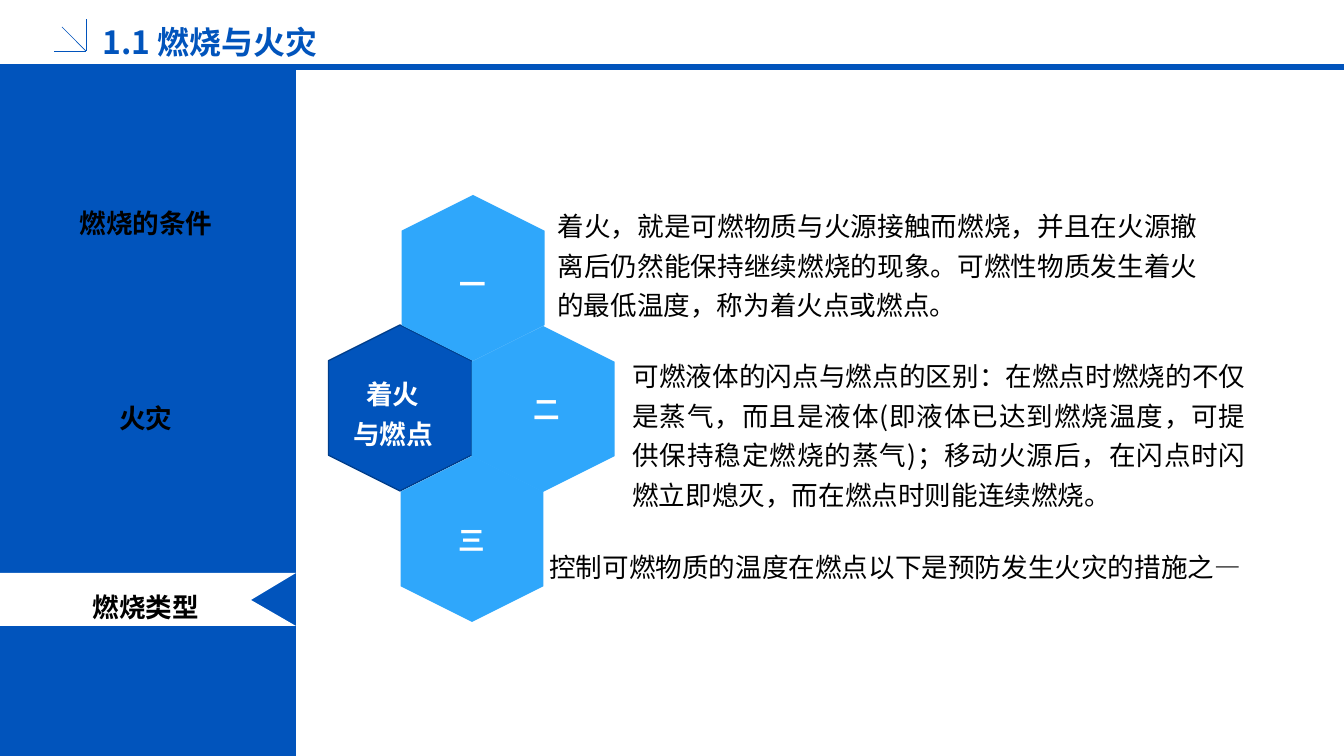
from lxml.etree import SubElement
from pptx import Presentation
from pptx.dml.color import RGBColor as RGB
from pptx.enum.shapes import MSO_CONNECTOR as Link, MSO_SHAPE as Kind
from pptx.enum.text import MSO_ANCHOR as Anchor, MSO_AUTO_SIZE as Fit, PP_ALIGN as Align
from pptx.oxml.ns import qn
from pptx.util import Pt

SCALE = 914400 / 95.6
COLORS = {"blue": "0154BC", "sky": "2FA7FB", "edge": "013E8B",
          "white": "FFFFFF", "black": "000000"}
NOTO = "Noto Sans CJK SC"


def px(*vals):
    return [round(v * SCALE) for v in vals]


def tint(name):
    return RGB.from_string(COLORS[name])


class Deck:
    def __init__(self, wide, high):
        self.prs = Presentation()
        self.prs.slide_width, self.prs.slide_height = px(wide, high)
        self.slide = self.prs.slides.add_slide(self.prs.slide_layouts[5])
        self.shapes = self.slide.shapes

    def paint(self, shape, fill, edge=None):
        shape.shadow.inherit = False
        shape.fill.solid()
        shape.fill.fore_color.rgb = tint(fill)
        if edge:
            shape.line.color.rgb = tint(edge)
            shape.line.width = Pt(1)
        else:
            shape.line.fill.background()

    def line(self, x1, y1, x2, y2, width):
        link = self.shapes.add_connector(Link.STRAIGHT, *px(x1, y1, x2, y2))
        link.line.color.rgb = tint("blue")
        link.line.width = Pt(width)
        SubElement(link._element.spPr, qn("a:effectLst"))

    def rect(self, x, y, w, h, fill):
        self.paint(self.shapes.add_shape(Kind.RECTANGLE, *px(x, y, w, h)), fill)

    def hexa(self, cx, cy, fill, edge=None):
        w, h = 166, 143
        box = px(cx - w / 2, cy - h / 2, w, h)
        shape = self.shapes.add_shape(Kind.HEXAGON, *box)
        shape.rotation = 90
        self.paint(shape, fill, edge)

    def tag(self, points, fill):
        pen = self.shapes.build_freeform(*points[0], scale=SCALE)
        pen.add_line_segments(points[1:], close=True)
        self.paint(pen.convert_to_shape(), fill)

    def style(self, para, font, size, color, bold, align, gap):
        para.alignment, para.line_spacing = align, gap
        face = para.font
        face.name, face.size, face.bold = font, Pt(size), bold
        face.color.rgb = tint(color)
        props = para._p.pPr.find(qn("a:defRPr"))
        SubElement(props, qn("a:ea")).set("typeface", NOTO)

    def text(self, x, y, w, h, words, font=NOTO, color="black", bold=False,
             align=Align.LEFT, gap=1.25, anchor=Anchor.TOP):
        frame = self.shapes.add_textbox(*px(x, y, w, h)).text_frame
        frame.word_wrap = True
        frame.vertical_anchor = anchor
        frame.text = words
        for para in frame.paragraphs:
            self.style(para, font, 20, color, bold, align, gap)

    def title(self, x, y, w, h, mark, words):
        shape = self.shapes.title
        shape.left, shape.top, shape.width, shape.height = px(x, y, w, h)
        frame = shape.text_frame
        frame.auto_size, frame.word_wrap = Fit.NONE, True
        frame.vertical_anchor = Anchor.MIDDLE
        para = frame.paragraphs[0]
        para.add_run().text = mark
        run = para.add_run()
        run.text, run.font.name = words, "Arial"
        self.style(para, NOTO, 24, "blue", True, Align.LEFT, 1.2)


def main():
    deck = Deck(1344, 756)

    # Header
    deck.title(93, 16, 301, 43, "1.1 ", "燃烧与火灾")
    deck.line(0, 67, 1344, 67, 4.5)
    for x, y in [(54, 51), (86, 19), (62, 27)]:
        deck.line(86, 51, x, y, 0.5)

    # Sidebar with the current topic marked
    deck.rect(0, 70, 296, 686, "blue")
    deck.tag([(0, 573), (296, 573), (251, 600), (296, 626), (0, 626)], "white")
    for y, topic in [(197, "燃烧的条件"), (392, "火灾"), (581, "燃烧类型")]:
        deck.text(33, y, 226, 45, topic, "Arial", bold=True,
                  align=Align.CENTER, gap=1.2, anchor=Anchor.MIDDLE)

    # Honeycomb
    deck.hexa(400, 408, "blue", "edge")
    deck.text(326, 365, 134, 90, "着火\n与燃点", color="white", bold=True,
              align=Align.CENTER)
    for cx, cy, tx, ty, num in [(473, 278, 473, 255, "一"),
                                (543, 409, 547, 380, "二"),
                                (472, 539, 472, 511, "三")]:
        deck.hexa(cx, cy, "sky")
        deck.text(tx - 67, ty, 134, 46, num, color="white", bold=True,
                  align=Align.CENTER)

    # Explanations
    deck.text(548, 197, 659, 130,
              "着火，就是可燃物质与火源接触而燃烧，并且在火源撤离后仍然能保持继续燃烧的现象。"
              "可燃性物质发生着火的最低温度，称为着火点或燃点。", align=Align.JUSTIFY)
    deck.text(623, 347, 632, 170,
              "可燃液体的闪点与燃点的区别：在燃点时燃烧的不仅是蒸气，而且是液体"
              "(即液体已达到燃烧温度，可提供保持稳定燃烧的蒸气)；移动火源后，"
              "在闪点时闪燃立即熄灭，而在燃点时则能连续燃烧。", align=Align.JUSTIFY)
    deck.text(540, 538, 713, 46,
              "控制可燃物质的温度在燃点以下是预防发生火灾的措施之—")

    deck.prs.save("out.pptx")


if __name__ == "__main__":
    main()
